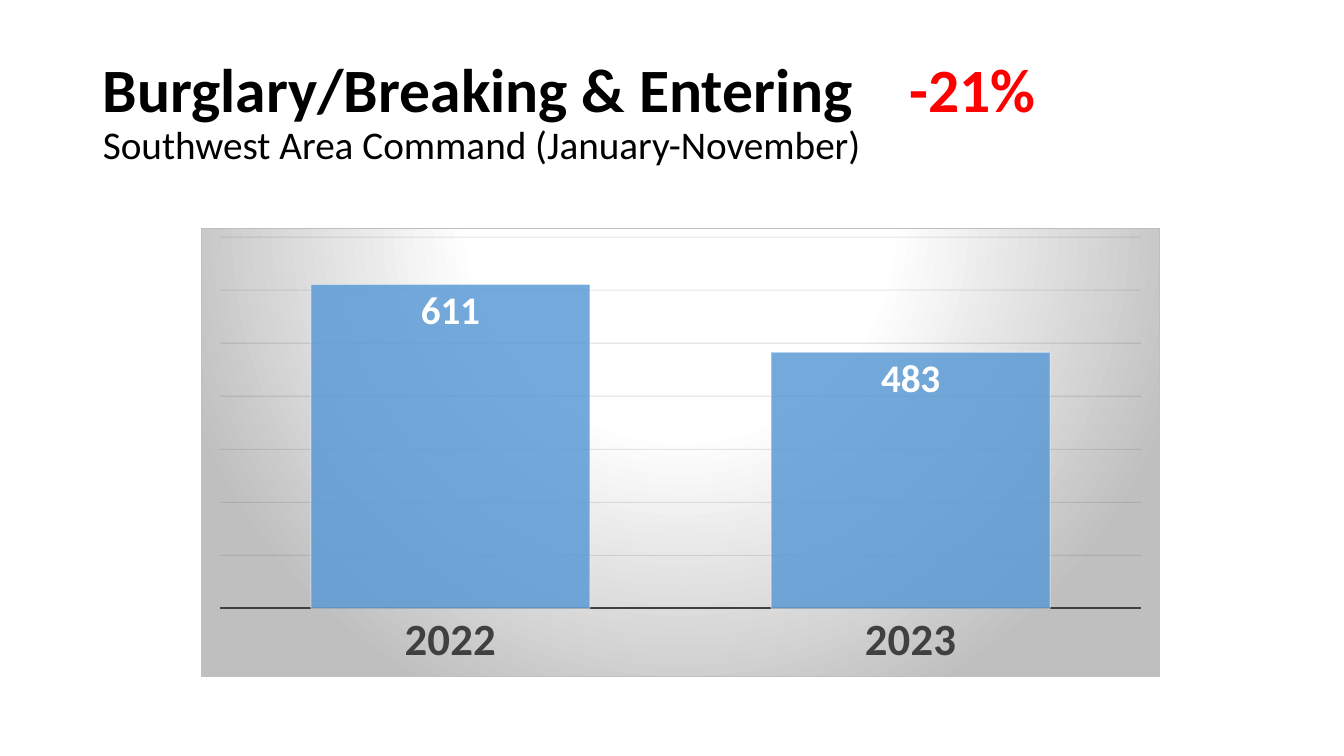
from dataclasses import dataclass

from lxml.etree import SubElement
from pptx import Presentation
from pptx.chart.data import CategoryChartData
from pptx.dml.color import RGBColor
from pptx.enum.chart import XL_CHART_TYPE, XL_LABEL_POSITION, XL_TICK_MARK
from pptx.enum.text import MSO_ANCHOR, MSO_AUTO_SIZE, PP_ALIGN
from pptx.oxml import parse_xml
from pptx.oxml.ns import nsdecls, qn
from pptx.util import Inches, Pt


@dataclass(frozen=True)
class Theme:
    font: str = "Calibri"
    black: str = "000000"
    red: str = "FF0000"
    white: str = "FFFFFF"
    bar: str = "5B9BD5"
    axis: str = "404040"
    grid: str = "0D0D0D"
    backdrop: str = "BFBFBF"
    title_size: int = 44
    axis_size: int = 32
    label_size: int = 28
    base_size: int = 10


THEME = Theme()


def style_font(font, size, color, bold):
    values = {"name": THEME.font, "size": Pt(size), "bold": bold}
    for name, value in values.items():
        setattr(font, name, value)
    font.color.rgb = RGBColor.from_string(color)


def style_line(line, color, width, opacity=100):
    """Colour a line and give it an opacity in percent."""
    line.color.rgb = RGBColor.from_string(color)
    line.width = Pt(width)
    if opacity < 100:
        color_element = line._ln.find(".//" + qn("a:srgbClr"))
        SubElement(color_element, qn("a:alpha"), val=str(opacity * 1000))


deck = Presentation()
deck.slide_width, deck.slide_height = Inches(13.33), Inches(7.5)
slide = deck.slides.add_slide(deck.slide_layouts[5])

# Title
title = slide.shapes.title
title.left, title.top = Inches(0.92), Inches(0.4)
title.width, title.height = Inches(11.5), Inches(1.45)
frame_format = {
    "vertical_anchor": MSO_ANCHOR.MIDDLE,
    "auto_size": MSO_AUTO_SIZE.NONE,
    "word_wrap": True,
}
for name, value in frame_format.items():
    setattr(title.text_frame, name, value)

para = title.text_frame.paragraphs[0]
para.alignment = PP_ALIGN.LEFT
para.line_spacing = 0.9
tab_stops = SubElement(para._p.get_or_add_pPr(), qn("a:tabLst"))
SubElement(tab_stops, qn("a:tab"), pos=str(Inches(8)), algn="l")

title_lines = [
    [
        ("Burglary/Breaking & Entering\t", THEME.title_size, THEME.black, True),
        ("-21%", THEME.title_size, THEME.red, True),
    ],
    [("Southwest Area Command (January-November)", THEME.label_size, THEME.black, False)],
]
for index, line_spans in enumerate(title_lines):
    if index:
        para.add_line_break()
    for text, size, color, bold in line_spans:
        span = para.add_run()
        span.text = text
        style_font(span.font, size, color, bold)

# Chart
burglaries = CategoryChartData()
burglaries.categories = ["2022", "2023"]
burglaries.add_series("Series 1", [611, 483])
chart = slide.shapes.add_chart(
    XL_CHART_TYPE.COLUMN_CLUSTERED,
    Inches(1.99), Inches(2.26), Inches(9.52), Inches(4.46), burglaries,
).chart
chart.has_title = False
chart.has_legend = False
style_font(chart.font, THEME.base_size, THEME.black, False)

stops = "".join(
    f'<a:gs pos="{position * 1000}"><a:srgbClr val="{color}"/></a:gs>'
    for position, color in [(0, THEME.white), (39, THEME.white), (100, THEME.backdrop)]
)
backdrop = parse_xml(
    f'<c:spPr {nsdecls("c", "a")}>'
    f'<a:gradFill><a:gsLst>{stops}</a:gsLst><a:path path="circle">'
    '<a:fillToRect l="50000" t="-80000" r="50000" b="180000"/></a:path></a:gradFill>'
    f'<a:ln w="{Pt(0.75)}"><a:solidFill><a:srgbClr val="{THEME.backdrop}"/></a:solidFill></a:ln>'
    "</c:spPr>"
)
chart._chartSpace.find(qn("c:chart")).addnext(backdrop)

years = chart.category_axis
years.major_tick_mark = years.minor_tick_mark = XL_TICK_MARK.NONE
style_font(years.tick_labels.font, THEME.axis_size, THEME.axis, True)
style_line(years.format.line, THEME.axis, 1.5)

counts = chart.value_axis
axis_format = {
    "minimum_scale": 0,
    "maximum_scale": 700,
    "major_unit": 100,
    "has_major_gridlines": True,
    "visible": False,
}
for name, value in axis_format.items():
    setattr(counts, name, value)
style_line(counts.major_gridlines.format.line, THEME.grid, 0.75, 10)

# Bars
plot = chart.plots[0]
plot.gap_width = 65
plot.vary_by_categories = False
bars = plot.series[0]
bars.format.fill.solid()
bars.format.fill.fore_color.rgb = RGBColor.from_string(THEME.bar)
bar_color = bars._element.find(".//" + qn("a:srgbClr"))
SubElement(bar_color, qn("a:alpha"), val="85000")
style_line(bars.format.line, THEME.white, 0.75, 50)

labels = bars.data_labels
labels.show_value = True
labels.position = XL_LABEL_POSITION.INSIDE_END
style_font(labels.font, THEME.label_size, THEME.white, True)

deck.save("out.pptx")
